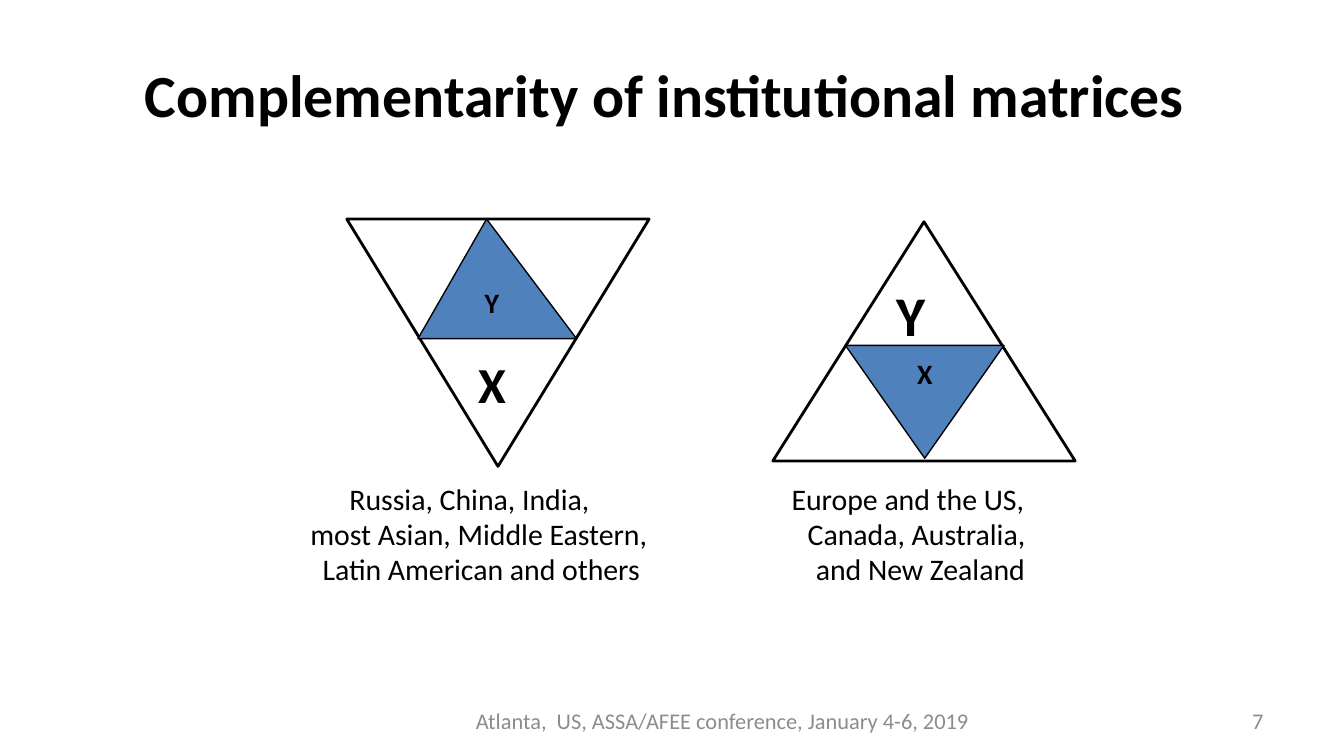
from dataclasses import dataclass

from lxml.etree import SubElement
from pptx import Presentation
from pptx.dml.color import RGBColor
from pptx.enum.shapes import MSO_SHAPE as Shape
from pptx.enum.text import MSO_ANCHOR as Anchor, PP_ALIGN as Align
from pptx.oxml.ns import qn
from pptx.util import Inches, Pt


@dataclass(frozen=True)
class Theme:
    font: str = "Calibri"
    ink: str = "000000"
    paper: str = "FFFFFF"
    accent: str = "4F81BD"
    muted: str = "8C8C8C"
    title: int = 32
    body: int = 16
    footer: int = 12
    inner: int = 15
    thick: float = 1.5
    thin: float = 0.75


class Deck:
    COLS, ROWS = 100, 56.25

    def __init__(self, theme):
        self.theme = theme
        self.prs = Presentation()
        self.prs.slide_width = Inches(10)
        self.prs.slide_height = Inches(5.625)
        self.s = self.prs.slides.add_slide(self.prs.slide_layouts[3])

    def x(self, cols):
        return int(self.prs.slide_width * cols / self.COLS)

    def y(self, rows):
        return int(self.prs.slide_height * rows / self.ROWS)

    def box(self, left, top, width, height):
        return self.x(left), self.y(top), self.x(width), self.y(height)

    def place(self, sp, box):
        sp.left, sp.top, sp.width, sp.height = self.box(*box)

    def run(self, p, text, size, color=None, bold=False):
        r = p.add_run()
        r.text = text
        r.font.name = self.theme.font
        r.font.size = Pt(size)
        r.font.bold = bold
        r.font.color.rgb = RGBColor.from_string(color or self.theme.ink)

    def title(self, text, box):
        sp = self.s.shapes.title
        self.place(sp, box)
        tf = sp.text_frame
        tf.vertical_anchor = Anchor.MIDDLE
        p = tf.paragraphs[0]
        p.alignment = Align.CENTER
        self.run(p, text, self.theme.title, bold=True)

    def regions(self, idx, lines, box):
        sp = self.s.placeholders[idx]
        self.place(sp, box)
        tf = sp.text_frame
        for i, (indent, text) in enumerate(lines):
            p = tf.add_paragraph() if i else tf.paragraphs[0]
            p.line_spacing = 0.8
            pPr = p._p.get_or_add_pPr()
            pPr.set("marL", str(self.x(indent)))
            pPr.set("indent", "0")
            SubElement(pPr, qn("a:buNone"))
            self.run(p, text, self.theme.body)

    def text(self, text, box, size, color=None, bold=False, align=Align.LEFT):
        tf = self.s.shapes.add_textbox(*self.box(*box)).text_frame
        tf.word_wrap = True
        tf.vertical_anchor = Anchor.MIDDLE
        p = tf.paragraphs[0]
        p.alignment = align
        self.run(p, text, size, color, bold)

    def triangle(self, box, fill, line, apex=0.5, inverted=False, label=None, lift=0):
        sp = self.s.shapes.add_shape(Shape.ISOSCELES_TRIANGLE, *self.box(*box))
        sp.shadow.inherit = False
        sp.adjustments[0] = apex
        sp.rotation = 180 if inverted else 0
        sp.fill.solid()
        sp.fill.fore_color.rgb = RGBColor.from_string(fill)
        sp.line.color.rgb = RGBColor.from_string(self.theme.ink)
        sp.line.width = Pt(line)
        if label:
            tf = sp.text_frame
            tf.margin_left = tf.margin_right = tf.margin_top = 0
            tf.margin_bottom = self.y(lift)
            tf.vertical_anchor = Anchor.MIDDLE
            if inverted:
                tf._txBody.bodyPr.set("rot", "10800000")
            p = tf.paragraphs[0]
            p.alignment = Align.CENTER
            self.run(p, label, self.theme.inner, bold=True)


def main():
    t = Theme()
    deck = Deck(t)
    deck.title("Complementarity of institutional matrices ", (5, 2.3, 90, 9.4))
    deck.regions(1, [(3.9, "Russia, China, India,"),
                     (1, "most Asian, Middle Eastern,"),
                     (1.9, "Latin American and others")], (21.1, 35.8, 32, 11.8))
    deck.regions(2, [(1.9, "Europe and the US,"),
                     (3.1, "Сanada, Australia,"),
                     (3.7, "and New Zealand")], (56, 35.8, 25.8, 11.8))
    deck.text("Atlanta,  US, ASSA/AFEE conference, January 4-6, 2019 ",
              (34.2, 52.1, 39.5, 3), t.footer, t.muted, align=Align.CENTER)
    deck.text("7", (71.7, 52.1, 23.3, 3), t.footer, t.muted, align=Align.RIGHT)

    deck.triangle((25.8, 16.3, 22.5, 18.4), t.paper, t.thick, inverted=True)
    deck.triangle((57.5, 16.5, 22.5, 17.8), t.paper, t.thick)
    deck.triangle((31.1, 16.3, 11.8, 8.9), t.accent, t.thin, apex=0.433,
                  label="Y", lift=0.9)
    deck.triangle((62.9, 25.7, 11.8, 8.4), t.accent, t.thin, inverted=True, label="X")
    deck.text("X", (34.6, 25.7, 4.6, 5.6), 27, bold=True)
    deck.text("Y", (65.7, 20.3, 5.9, 6.1), 30, bold=True)
    deck.prs.save("out.pptx")


if __name__ == "__main__":
    main()
